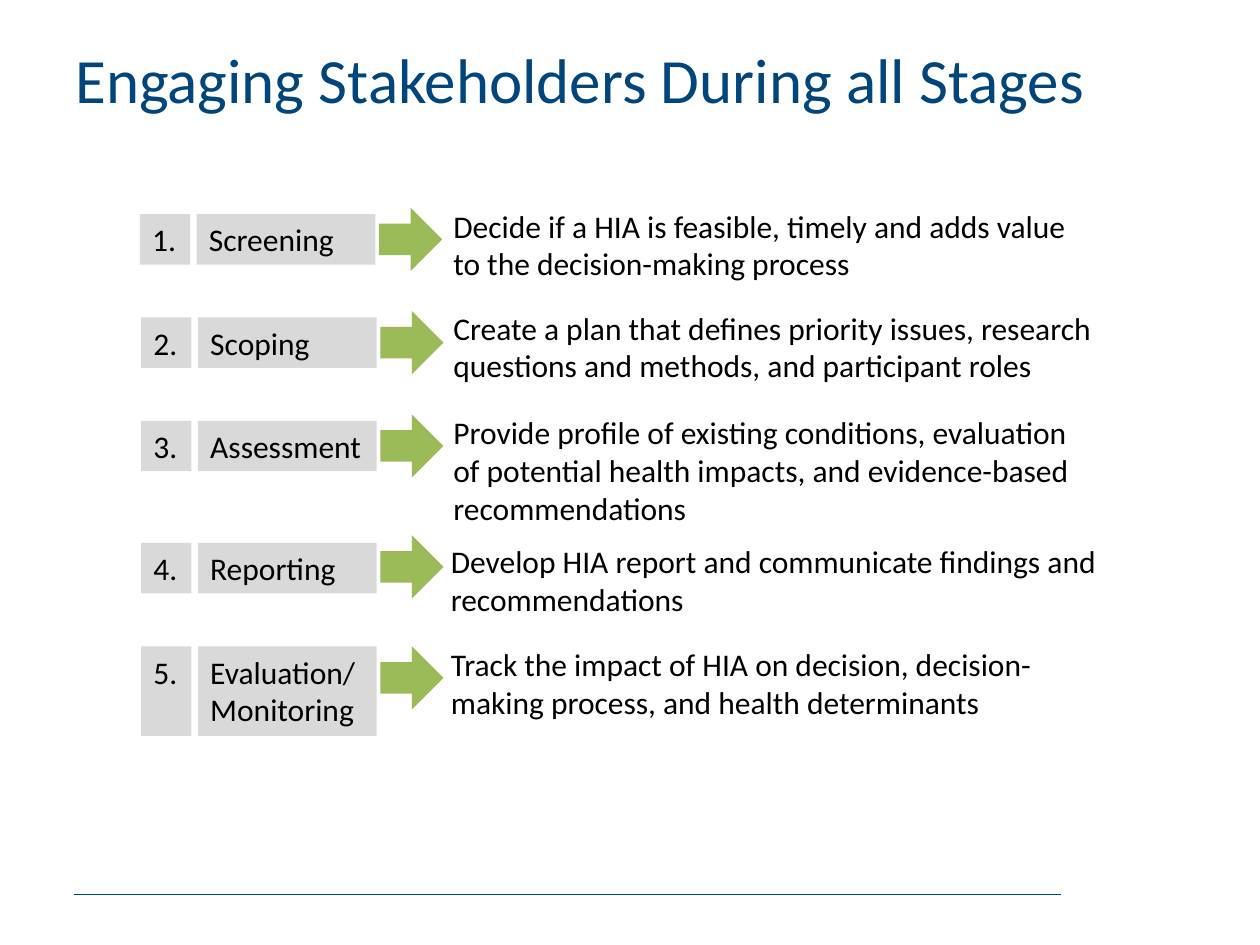
from pptx import Presentation
from pptx.dml.color import RGBColor
from pptx.enum.shapes import MSO_CONNECTOR, MSO_SHAPE
from pptx.enum.text import MSO_ANCHOR, PP_ALIGN
from pptx.oxml.ns import qn
from pptx.util import Inches, Pt
from lxml import etree

NAVY = RGBColor(0x00, 0x45, 0x7C)
GREEN = RGBColor(0x9B, 0xBB, 0x59)
GRAY = RGBColor(0xD9, 0xD9, 0xD9)
BLACK = RGBColor(0, 0, 0)

# label, left, top, height, arrow top, description, its left, top, width, height
STAGES = [
    ("Screening", 1.11, 1.7, 0.4, 1.65,
     "Decide if a HIA is feasible, timely and adds value to the decision-making process",
     3.5, 1.59, 5.23, 0.71),
    ("Scoping", 1.12, 2.52, 0.4, 2.47,
     "Create a plan that defines priority issues, research questions and methods, "
     "and participant roles",
     3.5, 2.4, 5.67, 0.71),
    ("Assessment", 1.12, 3.34, 0.4, 3.29,
     "Provide profile of existing conditions, evaluation of potential health impacts, "
     "and evidence-based recommendations",
     3.5, 3.23, 5.31, 1.01),
    ("Reporting", 1.12, 4.31, 0.4, 4.25,
     "Develop HIA report and communicate findings and recommendations",
     3.48, 4.25, 5.67, 0.71),
    ("Evaluation/Monitoring", 1.12, 5.13, 0.71, 5.13,
     "Track the impact of HIA on decision, decision-making process, and health determinants",
     3.48, 5.07, 5.48, 0.71),
]

deck = Presentation()
deck.slide_width, deck.slide_height = Inches(10), Inches(7.5)
slide = deck.slides.add_slide(deck.slide_layouts[6])


def add_shape(kind, left, top, width, height, color):
    shape = slide.shapes.add_shape(
        kind, Inches(left), Inches(top), Inches(width), Inches(height))
    shape.shadow.inherit = False
    shape.fill.solid()
    shape.fill.fore_color.rgb = color
    shape.line.fill.background()
    return shape


def write_text(shape, text, size=18, color=BLACK, anchor=MSO_ANCHOR.TOP):
    frame = shape.text_frame
    frame.word_wrap = True
    frame.vertical_anchor = anchor
    para = frame.paragraphs[0]
    para.text = text
    para.alignment = PP_ALIGN.LEFT
    para.font.name = "Calibri"
    para.font.size = Pt(size)
    para.font.color.rgb = color


footer_line = slide.shapes.add_connector(
    MSO_CONNECTOR.STRAIGHT, Inches(8.42), Inches(7.1), Inches(0.59), Inches(7.1))
footer_line.line.color.rgb = NAVY
footer_line.line.width = Pt(0.75)
etree.SubElement(footer_line._element.spPr, qn("a:effectLst"))

title = slide.shapes.add_textbox(Inches(0.5), Inches(0), Inches(9), Inches(1.25))
write_text(title, "Engaging Stakeholders During all Stages", 36, NAVY, MSO_ANCHOR.MIDDLE)

for number, stage in enumerate(STAGES, start=1):
    label, left, top, height, arrow_top, description, *text_area = stage
    add_shape(MSO_SHAPE.RIGHT_ARROW, left + 1.9, arrow_top, 0.5, 0.5, GREEN)
    number_box = add_shape(MSO_SHAPE.RECTANGLE, left, top, 0.4, height, GRAY)
    write_text(number_box, f"{number}.")
    label_box = add_shape(MSO_SHAPE.RECTANGLE, left + 0.45, top, 1.42, height, GRAY)
    write_text(label_box, label)
    description_box = slide.shapes.add_textbox(*map(Inches, text_area))
    write_text(description_box, description)

deck.save("out.pptx")
